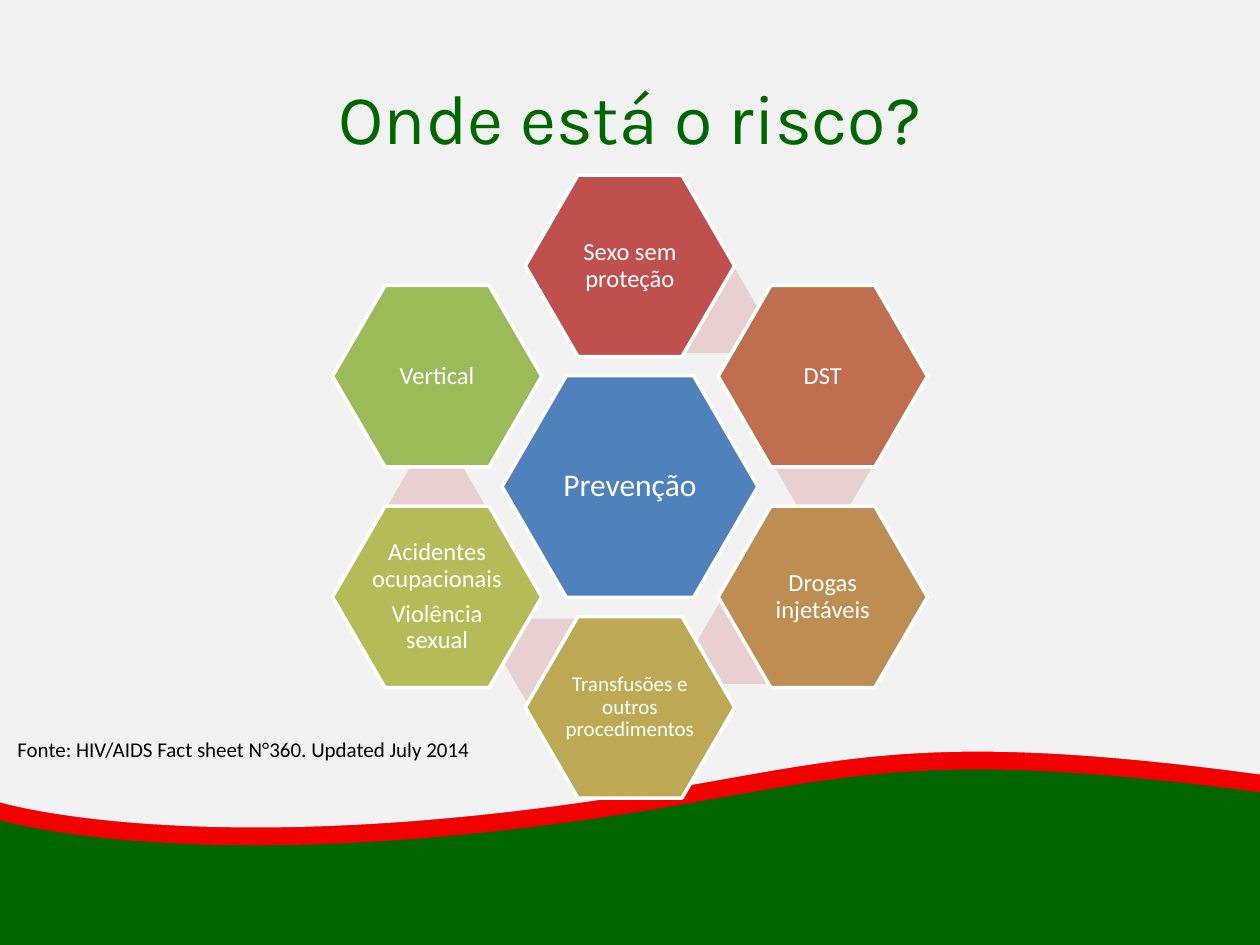
"""Builds a slide with a ring of HIV risk hexagons around prevention."""
import math

from lxml import etree
from pptx import Presentation
from pptx import util as u
from pptx.dml.color import RGBColor
from pptx.enum import shapes, text
from pptx.oxml.ns import qn

GREEN = RGBColor(0x00, 0x66, 0x00)
RED = RGBColor(0xF2, 0x00, 0x00)
GREY = RGBColor(0xF2, 0xF2, 0xF2)
WHITE = RGBColor(0xFF, 0xFF, 0xFF)
BLACK = RGBColor(0x00, 0x00, 0x00)
BLUE = RGBColor(0x4F, 0x81, 0xBD)
PINK = RGBColor(0xE8, 0xD0, 0xD0)

CENTRE = (12.7, 9.81)
RADII = (4.49, 4.45)
WAVE = [
    (-0.08, 16.51), (0.2, 16.61), (4.32, 17.73), (12.78, 16.38),
    (17.02, 15.7), (18.47, 15.04), (25.45, 15.98),
]
WAVE_FLOOR = 17.05
RISKS = [
    (["Sexo sem proteção"], 14, RGBColor(0xC0, 0x50, 0x4D), (14.34, 6.28)),
    (["DST"], 14, RGBColor(0xBF, 0x6F, 0x4F), (16.6, 9.42)),
    (["Drogas injetáveis"], 14, RGBColor(0xBE, 0x8D, 0x52), (15.02, 12.95)),
    (["Transfusões e outros procedimentos"], 12, RGBColor(0xBD, 0xA9, 0x54), (11.11, 13.31)),
    (["Acidentes ocupacionais", "Violência sexual"], 14, RGBColor(0xB5, 0xBC, 0x57), (8.8, 10.19)),
    (["Vertical"], 14, RGBColor(0x9B, 0xBB, 0x59), None),
]


class RiskPage:
    """Holds the style and the current slide."""

    body_font = "Calibri"
    title_font = "Karla"

    def __init__(self, page):
        self.page = page

    def paint(self, shape, fill, outline=None):
        shape.shadow.inherit = False
        shape.fill.solid()
        shape.fill.fore_color.rgb = fill
        if outline is None:
            shape.line.fill.background()
        else:
            shape.line.color.rgb = outline
            shape.line.width = u.Pt(2)

    def style(self, para, size, color, name):
        para.font.size = u.Pt(size)
        para.font.color.rgb = color
        para.font.name = name

    def title(self, words):
        box = self.page.shapes.title
        box.left, box.top = u.Cm(1.27), u.Cm(0.76)
        box.width, box.height = u.Cm(22.86), u.Cm(3.18)
        box.text_frame.text = words
        box.text_frame.vertical_anchor = text.MSO_ANCHOR.MIDDLE
        para = box.text_frame.paragraphs[0]
        para.alignment = text.PP_ALIGN.CENTER
        self.style(para, 40, GREEN, self.title_font)
        box.element.getparent().append(box.element)

    def band(self, left, top, width, height, fill):
        band = self.page.shapes.add_shape(
            shapes.MSO_SHAPE.RECTANGLE, u.Cm(left), u.Cm(top), u.Cm(width), u.Cm(height))
        self.paint(band, fill)

    def wave(self, top, rise, fill):
        edge = [(x, y - rise) for x, y in WAVE]
        outline = [*edge, (edge[-1][0], top), (edge[0][0], top)]
        points = [(u.Cm(x), u.Cm(y)) for x, y in outline]
        builder = self.page.shapes.build_freeform(*points[0])
        builder.add_line_segments(points[1:], close=True)
        wave = builder.convert_to_shape()
        self.paint(wave, fill)

        contour = next(wave.element.iter(qn("a:path")))
        segments = contour.findall(qn("a:lnTo"))
        for first in range(0, len(WAVE) - 1, 3):
            curve = etree.Element(qn("a:cubicBezTo"))
            segments[first].addprevious(curve)
            for segment in segments[first:first + 3]:
                curve.append(segment[0])
                contour.remove(segment)
        wave.height = u.Cm(WAVE_FLOOR - rise - top)
        contour.set("h", str(wave.height))

    def hexagon(self, centre, width, height, fill, outline=None, lines=(), size=14):
        box = self.page.shapes.add_shape(
            shapes.MSO_SHAPE.HEXAGON,
            u.Cm(centre[0] - width / 2), u.Cm(centre[1] - height / 2),
            u.Cm(width), u.Cm(height))
        box.adjustments[0] = 0.29
        self.paint(box, fill, outline)
        if not lines:
            return
        frame = box.text_frame
        frame.word_wrap = True
        frame.vertical_anchor = text.MSO_ANCHOR.MIDDLE
        frame.margin_left = frame.margin_right = u.Cm(0.05)
        frame.margin_top = frame.margin_bottom = u.Cm(0.05)
        frame.text = "\n".join(lines)
        for para in frame.paragraphs:
            para.alignment = text.PP_ALIGN.CENTER
            para.line_spacing = 0.9
            para.space_after = u.Pt(round(0.35 * size))
            self.style(para, size, WHITE, self.body_font)

    def note(self, left, top, width, height, words):
        box = self.page.shapes.add_textbox(u.Cm(left), u.Cm(top), u.Cm(width), u.Cm(height))
        box.text_frame.word_wrap = True
        box.text_frame.text = words
        self.style(box.text_frame.paragraphs[0], 12, BLACK, self.body_font)


def main():
    deck = Presentation()
    deck.slide_width, deck.slide_height = u.Cm(25.4), u.Cm(19.05)
    risk = RiskPage(deck.slides.add_slide(deck.slide_layouts[5]))

    risk.band(-0.05, 13.36, 25.48, 5.72, GREEN)
    risk.wave(12.75, 0, RED)
    risk.wave(-0.03, 0.36, GREY)
    risk.title("Onde está o risco?")

    risk.hexagon(CENTRE, 5.16, 4.47, BLUE, WHITE, ["Prevenção"], 18)
    for index, (lines, size, fill, tab) in enumerate(RISKS):
        if tab:
            risk.hexagon(tab, 1.96, 1.68, PINK)
        angle = math.radians(60 * index)
        centre = (CENTRE[0] + RADII[0] * math.sin(angle),
                  CENTRE[1] - RADII[1] * math.cos(angle))
        risk.hexagon(centre, 4.22, 3.66, fill, WHITE, lines, size)

    risk.note(0.1, 14.73, 12.7, 0.76, "Fonte: HIV/AIDS Fact sheet N°360. Updated July 2014")
    deck.save("out.pptx")


if __name__ == "__main__":
    main()
